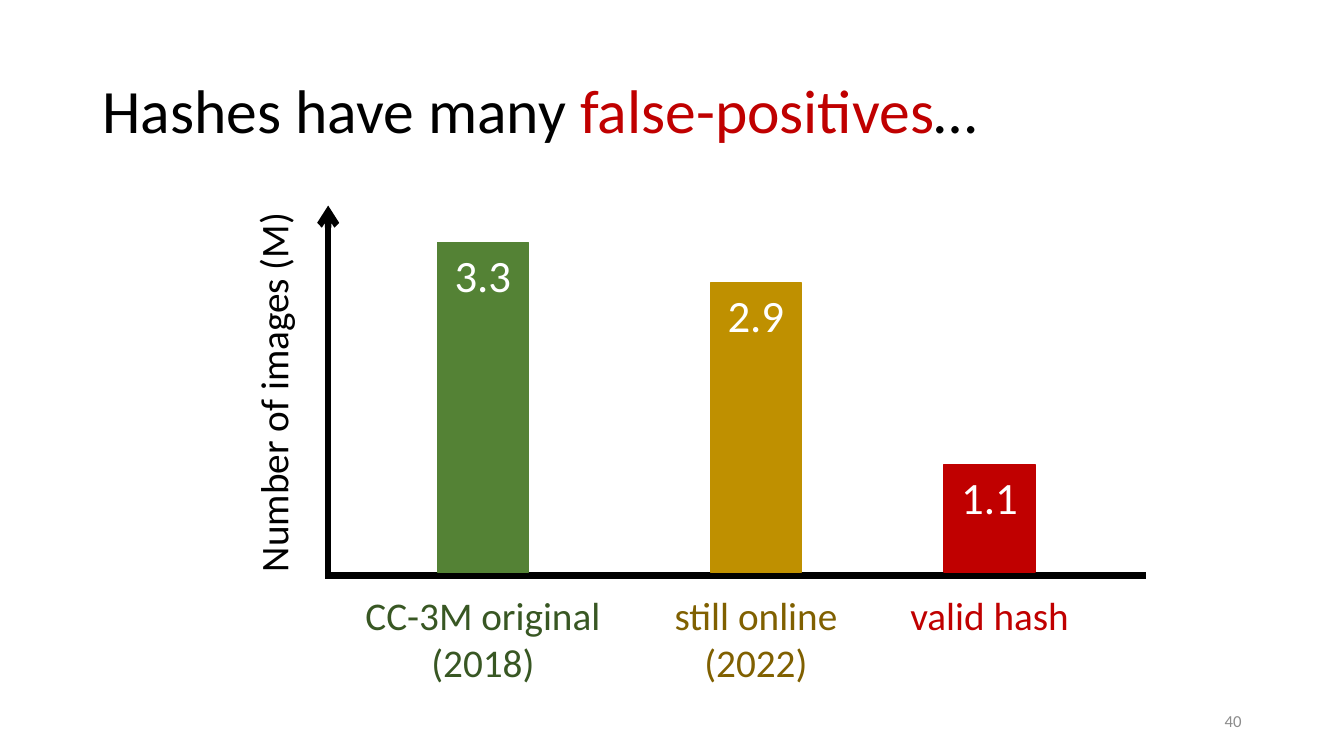
from collections import namedtuple

from lxml import etree
from pptx import Presentation
from pptx import util as u
from pptx.dml.color import RGBColor
from pptx.enum import shapes, text
from pptx.oxml import ns

Box = namedtuple("Box", "left top width height")
Bar = namedtuple("Bar", "value centre fill label ink label_width label_height")

COLOURS = {
    "black": "000000", "white": "FFFFFF", "grey": "8C8C8C", "red": "C00000",
    "green": "548235", "dark green": "385723",
    "gold": "BF9000", "dark gold": "806000",
}
CM_PER_MILLION = 2.54
BAR_WIDTH = 2.29
AXIS_HALF_WIDTH = 0.08
BARS = [
    Bar(3.3, 3.9, "green", "CC-3M original\v(2018)", "dark green", 6.5, 2.64),
    Bar(2.9, 10.78, "gold", "still online\n(2022)", "dark gold", 4.65, 2.64),
    Bar(1.1, 16.67, "red", "valid hash", "red", 4.55, 1.45),
]


def rgb(name):
    return RGBColor.from_string(COLOURS[name])


def cm(*lengths):
    return [u.Cm(length) for length in lengths]


def write(frame, words, size=28, colour="black", align=text.PP_ALIGN.CENTER,
          anchor=text.MSO_ANCHOR.TOP, wrap=True, spacing=None, accents=None):
    """Fill a text frame; accents maps pieces of the text to their own colour."""
    frame.word_wrap = wrap
    frame.vertical_anchor = anchor
    frame.text = words if isinstance(words, str) else ""
    if not isinstance(words, str):
        for piece in words:
            frame.paragraphs[0].add_run().text = piece
    for paragraph in frame.paragraphs:
        paragraph.alignment = align
        paragraph.line_spacing = spacing
        for run in paragraph.runs:
            run.font.name = "Calibri"
            run.font.size = u.Pt(size)
            run.font.color.rgb = rgb((accents or {}).get(run.text, colour))


def add_words(slide, box, words, rotation=0, **style):
    words_box = slide.shapes.add_textbox(*cm(*box))
    words_box.rotation = rotation
    write(words_box.text_frame, words, **style)


def add_title(slide, box):
    title = slide.shapes.title
    title.left, title.top, title.width, title.height = cm(*box)
    write(title.text_frame, ["Hashes have many ", "false-positives", "…"], size=44,
          align=text.PP_ALIGN.LEFT, anchor=text.MSO_ANCHOR.MIDDLE, spacing=0.9,
          accents={"false-positives": "red"})


def add_axis(slide, start, end, arrow=False):
    axis = slide.shapes.add_connector(
        shapes.MSO_CONNECTOR.STRAIGHT, *cm(*start, *end))
    axis.line.color.rgb = rgb("black")
    axis.line.width = u.Pt(4.5)
    if arrow:
        etree.SubElement(axis.line._get_or_add_ln(), ns.qn("a:tailEnd"), type="arrow")
    etree.SubElement(axis._element.spPr, ns.qn("a:effectLst"))


def add_bar(slide, plot, bar):
    centre = plot.left + bar.centre
    baseline = plot.top + plot.height
    height = bar.value * CM_PER_MILLION
    column = slide.shapes.add_shape(
        shapes.MSO_SHAPE.RECTANGLE,
        *cm(centre - BAR_WIDTH / 2, baseline - height,
            BAR_WIDTH, height - AXIS_HALF_WIDTH))
    column.shadow.inherit = False
    column.fill.solid()
    column.fill.fore_color.rgb = rgb(bar.fill)
    column.line.color.rgb = rgb(bar.fill)
    column.line.width = u.Pt(1)
    write(column.text_frame, str(bar.value), size=32, colour="white")
    label_box = Box(centre - bar.label_width / 2, baseline + 0.28,
                    bar.label_width, bar.label_height)
    add_words(slide, label_box, bar.label, colour=bar.ink, wrap=False)


def add_bar_diagram(slide, plot):
    baseline = plot.top + plot.height
    add_axis(slide, (plot.left, baseline), (plot.left + plot.width, baseline))
    add_axis(slide, (plot.left, baseline + AXIS_HALF_WIDTH),
             (plot.left, plot.top), arrow=True)
    name_width, name_height = 9.65, 1.45
    name_box = Box(plot.left - 1.39 - name_width / 2,
                   plot.top + 4.71 - name_height / 2, name_width, name_height)
    add_words(slide, name_box, "Number of images (M)", rotation=270, wrap=False)
    for bar in BARS:
        add_bar(slide, plot, bar)


def add_page_number(slide, box):
    add_words(slide, box, "40", size=12, colour="grey", align=text.PP_ALIGN.RIGHT,
              anchor=text.MSO_ANCHOR.MIDDLE)


def main():
    deck = Presentation()
    deck.slide_width, deck.slide_height = cm(33.87, 19.05)
    slide = deck.slides.add_slide(deck.slide_layouts.get_by_name("Title Only"))
    add_title(slide, Box(2.33, 1.01, 29.21, 3.68))
    add_bar_diagram(slide, Box(8.27, 5.18, 20.62, 9.32))
    add_page_number(slide, Box(23.92, 17.66, 7.62, 1.01))
    deck.save("out.pptx")


if __name__ == "__main__":
    main()
